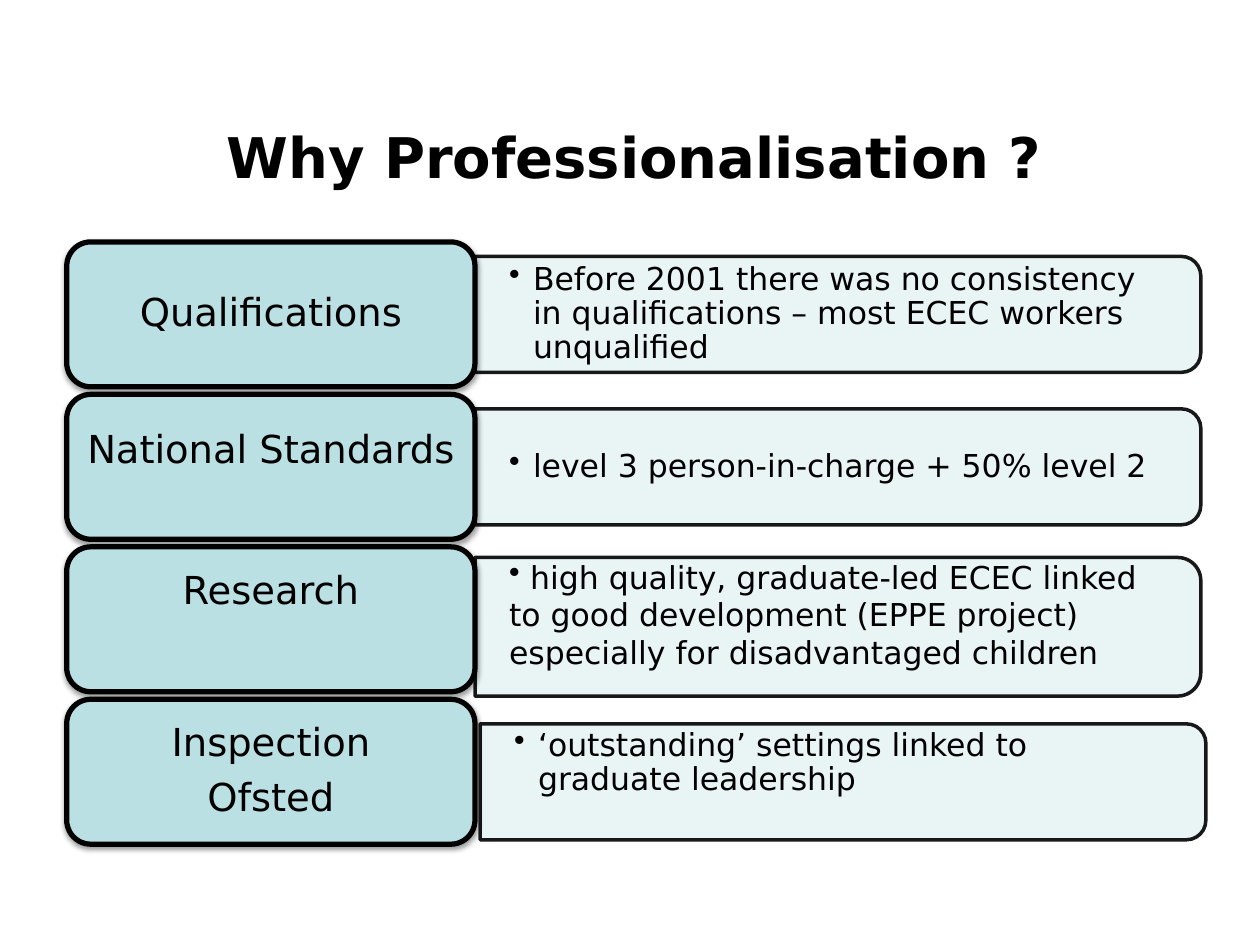
from lxml import etree
from pptx import Presentation
from pptx.dml.color import RGBColor
from pptx.enum.shapes import MSO_SHAPE
from pptx.enum.text import MSO_ANCHOR, PP_ALIGN
from pptx.oxml.ns import qn
from pptx.util import Inches, Pt

ROUNDED = MSO_SHAPE.ROUNDED_RECTANGLE
ROUNDED_TOP = MSO_SHAPE.ROUND_2_SAME_RECTANGLE
MIDDLE = MSO_ANCHOR.MIDDLE
CENTER, LEFT = PP_ALIGN.CENTER, PP_ALIGN.LEFT

FONT = "DejaVu Sans"
COLORS = {"ink": "000000", "label": "BBE0E3", "panel": "E7F3F4"}
SLIDE_WIDTH, SLIDE_HEIGHT = 10, 7.5
GRID_LEFT, GRID_TOP = 0.53, 1.92
LABEL_WIDTH, PANEL_WIDTH = 3.24, 5.76
ROW_HEIGHT, ROW_PITCH = 1.15, 1.21
PANEL_HEIGHT = 0.92
LABEL_INSETS = (0.09, 0.05)
PANEL_INSETS = (0.27, 0.14)

ROWS = [
    {
        "label": {"lines": ["Qualifications"]},
        "panel": {"text": "Before 2001 there was no consistency in qualifications – "
                          "most ECEC workers unqualified"},
    },
    {
        "label": {"lines": ["National Standards"], "lift": 0.15, "spacing": 1},
        "panel": {"text": "level 3 person-in-charge + 50% level 2"},
    },
    {
        "label": {"lines": ["Research"], "lift": 0.22},
        "panel": {"text": " high quality, graduate-led ECEC linked to good development "
                          "(EPPE project) especially for disadvantaged children",
                  "height": 1.1, "drop": 0.06, "lift": 0.1, "spacing": 1, "hanging": 0},
    },
    {
        "label": {"lines": ["Inspection", "Ofsted"]},
        "panel": {"text": "‘outstanding’ settings linked to graduate leadership",
                  "shift": 0.04, "drop": 0.08, "lift": 0.15},
    },
]


def add_bullet(paragraph, hanging):
    """Give the paragraph a round bullet with a hanging indent in inches."""
    properties = paragraph._p.get_or_add_pPr()
    properties.set("marL", str(Inches(hanging)))
    properties.set("indent", str(-Inches(hanging)))
    etree.SubElement(properties, qn("a:buChar")).set("char", "•")


def write_text(shape, lines, size, bold=False, align=LEFT, spacing=1, gap=0,
               insets=(0.1, 0.05), wrap=True, hanging=None):
    """Write the lines as formatted paragraphs, centred vertically in the shape."""
    frame = shape.text_frame
    frame.word_wrap = wrap
    frame.vertical_anchor = MIDDLE
    frame.margin_left = frame.margin_right = Inches(insets[0])
    frame.margin_top = frame.margin_bottom = Inches(insets[1])
    for index, line in enumerate(lines):
        paragraph = frame.paragraphs[0] if index == 0 else frame.add_paragraph()
        if hanging is not None:
            add_bullet(paragraph, hanging)
        paragraph.alignment = align
        paragraph.line_spacing = spacing
        paragraph.space_before = Pt(gap if index else 0)
        run = paragraph.add_run()
        run.text = line
        run.font.name = FONT
        run.font.size = Pt(size)
        run.font.bold = bold
        run.font.color.rgb = RGBColor.from_string(COLORS["ink"])


def add_block(slide, kind, box, fill, line_width):
    """Add a filled, outlined shape without a shadow."""
    shape = slide.shapes.add_shape(kind, *map(Inches, box))
    shape.shadow.inherit = False
    shape.fill.solid()
    shape.fill.fore_color.rgb = RGBColor.from_string(COLORS[fill])
    shape.line.color.rgb = RGBColor.from_string(COLORS["ink"])
    shape.line.width = Pt(line_width)
    return shape


def set_opacity(element, percent):
    """Make every colour inside the element partly transparent."""
    for color in list(element.iter(qn("a:srgbClr"))):
        etree.SubElement(color, qn("a:alpha")).set("val", str(percent * 1000))


def add_soft_shadow(shape):
    """Add a soft shadow below the shape."""
    effects = shape.element.spPr.find(qn("a:effectLst"))
    shadow = etree.SubElement(effects, qn("a:outerShdw"), blurRad=str(Pt(3.1)),
                              dist=str(Pt(1.6)), dir="5400000", rotWithShape="0")
    etree.SubElement(shadow, qn("a:srgbClr"), val=COLORS["ink"])
    set_opacity(shadow, 38)


def add_panel(slide, box, text, height=PANEL_HEIGHT, shift=0, drop=0, lift=0,
              spacing=0.9, hanging=0.19):
    """Add the detail panel, rounded on its right, and its bullet text."""
    left, top, width, row_height = box
    left += shift
    middle = top + row_height / 2 + drop
    turned_box = (left + (width - height) / 2, middle - width / 2, height, width)
    panel = add_block(slide, ROUNDED_TOP, turned_box, "panel", 2)
    panel.rotation = 90
    set_opacity(panel.element.spPr, 90)
    text_height = height - 0.09
    text_box = (left, middle - text_height / 2 - lift, width - 0.04, text_height)
    write_text(slide.shapes.add_textbox(*map(Inches, text_box)), [text], 18,
               spacing=spacing, insets=PANEL_INSETS, hanging=hanging)


def add_label(slide, box, lines, lift=0, spacing=0.9):
    """Add the rounded row label and its centred text."""
    add_soft_shadow(add_block(slide, ROUNDED, box, "label", 3))
    left, top, width, height = box
    margin = 0.055
    text_box = (left + margin, top + margin - lift, width - 2 * margin, height - 2 * margin)
    write_text(slide.shapes.add_textbox(*map(Inches, text_box)), lines, 22,
               align=CENTER, spacing=spacing, gap=7.7, insets=LABEL_INSETS)


def add_row(slide, box, label, panel):
    """Add one row: a label column with a detail panel to its right."""
    left, top, width, height = box
    add_panel(slide, (left + LABEL_WIDTH, top, width - LABEL_WIDTH, height), **panel)
    add_label(slide, (left, top, LABEL_WIDTH, height), **label)


def add_title(slide, box, text):
    """Place and format the title placeholder."""
    title = slide.shapes.title
    title.left, title.top, title.width, title.height = map(Inches, box)
    write_text(title, [text], 32, bold=True, align=CENTER, wrap=False)


def main():
    """Build the slide and save it."""
    presentation = Presentation()
    presentation.slide_width = Inches(SLIDE_WIDTH)
    presentation.slide_height = Inches(SLIDE_HEIGHT)
    slide = presentation.slides.add_slide(presentation.slide_layouts[5])
    add_title(slide, (1.67, 0.92, 6.73, 0.64), "Why Professionalisation ?")
    for index, row in enumerate(ROWS):
        box = (GRID_LEFT, GRID_TOP + index * ROW_PITCH, LABEL_WIDTH + PANEL_WIDTH, ROW_HEIGHT)
        add_row(slide, box, **row)
    presentation.save("out.pptx")


if __name__ == "__main__":
    main()
